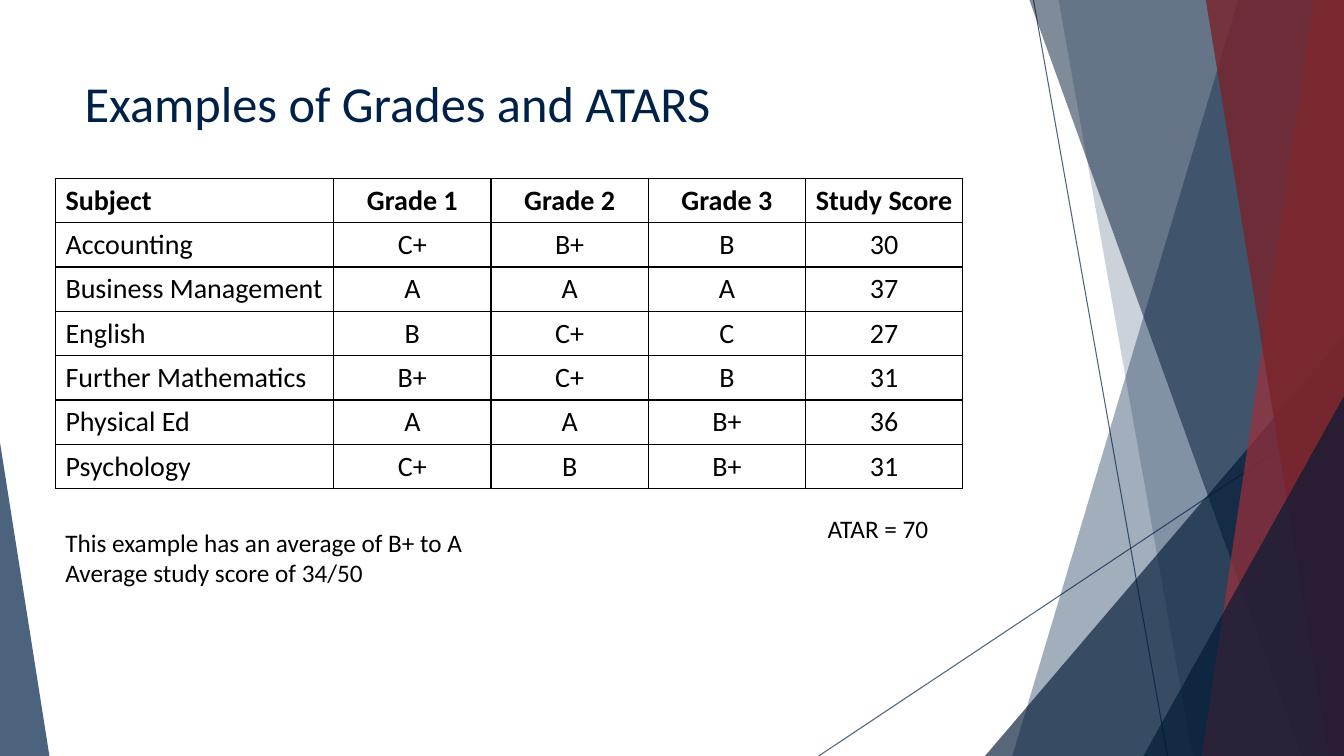
from lxml import etree
from pptx import Presentation
from pptx.dml.color import RGBColor
from pptx.enum import shapes, text
from pptx.oxml import ns
from pptx.util import Inches, Pt

NAVY = RGBColor(0x00, 0x21, 0x47)
DARK_NAVY = RGBColor(0x00, 0x19, 0x35)
RED = RGBColor(0x9E, 0x30, 0x39)
DARK_RED = RGBColor(0x77, 0x24, 0x2B)
BLACK = RGBColor(0x00, 0x00, 0x00)

WIDTH, HEIGHT = 13.33, 7.5
FONT = "Calibri"
COLUMN_WIDTHS = [2.76] + [1.56] * 4
ROW_HEIGHT = 0.44
GRADES = [
    ("Subject", "Grade 1", "Grade 2", "Grade 3", "Study Score"),
    ("Accounting", "C+", "B+", "B", "30"),
    ("Business Management", "A", "A", "A", "37"),
    ("English", "B", "C+", "C", "27"),
    ("Further Mathematics", "B+", "C+", "B", "31"),
    ("Physical Ed", "A", "A", "B+", "36"),
    ("Psychology", "C+", "B", "B+", "31"),
]


def set_opacity(fill_parent, percent):
    color = fill_parent.find(".//" + ns.qn("a:srgbClr"))
    etree.SubElement(color, ns.qn("a:alpha"), val=str(percent * 1000))


def paint(shape, color, opacity):
    shape.shadow.inherit = False
    shape.fill.solid()
    shape.fill.fore_color.rgb = color
    shape.line.fill.background()
    set_opacity(shape._element.spPr, opacity)


def add_ray(page, start, end):
    ray = page.shapes.add_connector(
        shapes.MSO_CONNECTOR.STRAIGHT, *map(Inches, start + end))
    ray.line.color.rgb = NAVY
    ray.line.width = Pt(0.75)
    set_opacity(ray._element.spPr, 70)
    etree.SubElement(ray._element.spPr, ns.qn("a:effectLst"))


def add_band(page, top_left, bottom_left, color, opacity):
    builder = page.shapes.build_freeform(Inches(top_left), 0)
    corners = [(WIDTH, 0), (WIDTH, HEIGHT), (bottom_left, HEIGHT)]
    builder.add_line_segments([(Inches(x), Inches(y)) for x, y in corners])
    paint(builder.convert_to_shape(), color, opacity)


def add_corner(page, left, top, width, apex, color, opacity):
    corner = page.shapes.add_shape(
        shapes.MSO_SHAPE.ISOSCELES_TRIANGLE, Inches(left), Inches(top),
        Inches(width), Inches(HEIGHT - top))
    corner.adjustments[0] = apex
    paint(corner, color, opacity)


def add_span(para, words, size, color, bold=False):
    span = para.add_run()
    span.text = words
    span.font.name = FONT
    span.font.size = Pt(size)
    span.font.bold = bold
    span.font.color.rgb = color


def add_text(page, left, top, width, height, lines, size, color):
    box = page.shapes.add_textbox(*map(Inches, (left, top, width, height)))
    frame = box.text_frame
    frame.word_wrap = True
    for index, words in enumerate(lines):
        para = frame.add_paragraph() if index else frame.paragraphs[0]
        add_span(para, words, size, color)


def add_borders(cell):
    properties = cell._tc.get_or_add_tcPr()
    for side in ("lnL", "lnR", "lnT", "lnB"):
        border = etree.SubElement(properties, ns.qn("a:" + side), w=str(Pt(1)))
        fill = etree.SubElement(border, ns.qn("a:solidFill"))
        etree.SubElement(fill, ns.qn("a:srgbClr"), val=str(BLACK))


def add_grades(page, left, top):
    frame = page.shapes.add_table(
        len(GRADES), len(COLUMN_WIDTHS), Inches(left), Inches(top),
        Inches(sum(COLUMN_WIDTHS)), Inches(ROW_HEIGHT * len(GRADES)))
    table = frame.table
    table.first_row = table.horz_banding = False
    for column, width in zip(table.columns, COLUMN_WIDTHS):
        column.width = Inches(width)
    for row_index, values in enumerate(GRADES):
        table.rows[row_index].height = Inches(ROW_HEIGHT)
        for column_index, value in enumerate(values):
            cell = table.cell(row_index, column_index)
            add_borders(cell)
            cell.fill.background()
            cell.margin_right = Inches(0.08)
            para = cell.text_frame.paragraphs[0]
            if column_index:
                cell.margin_left = Inches(0.08)
                para.alignment = text.PP_ALIGN.CENTER
            add_span(para, value, 20, BLACK, row_index == 0)


def add_backdrop(page):
    add_ray(page, (10.25, 0), (11.58, HEIGHT))
    add_ray(page, (WIDTH, 4.03), (8.12, HEIGHT))
    add_band(page, 12.28, 10.04, NAVY, 36)
    add_band(page, 10.5, 11.83, NAVY, 20)
    add_corner(page, 9.77, 3.33, 3.56, 1, DARK_NAVY, 66)
    add_band(page, 10.21, 12.91, DARK_NAVY, 50)
    add_band(page, 13.03, 11.92, RED, 70)
    add_band(page, 11.96, 13.18, DARK_RED, 80)
    add_corner(page, 11.34, 3.93, 1.99, 1, DARK_NAVY, 66)
    add_corner(page, 0, 4.39, 0.49, 0, NAVY, 70)


def main():
    deck = Presentation()
    deck.slide_width, deck.slide_height = Inches(WIDTH), Inches(HEIGHT)
    page = deck.slides.add_slide(deck.slide_layouts[6])
    add_backdrop(page)
    add_text(page, 0.74, 0.67, 9.4, 1.44,
             ["Examples of Grades and ATARS"], 36, NAVY)
    add_grades(page, 0.55, 1.77)
    add_text(page, 8.11, 5.04, 2.03, 0.4, ["ATAR = 70"], 18, BLACK)
    add_text(page, 0.55, 5.18, 6.56, 0.71,
             ["This example has an average of B+ to A",
              "Average study score of 34/50"], 18, BLACK)
    deck.save("out.pptx")


if __name__ == "__main__":
    main()
